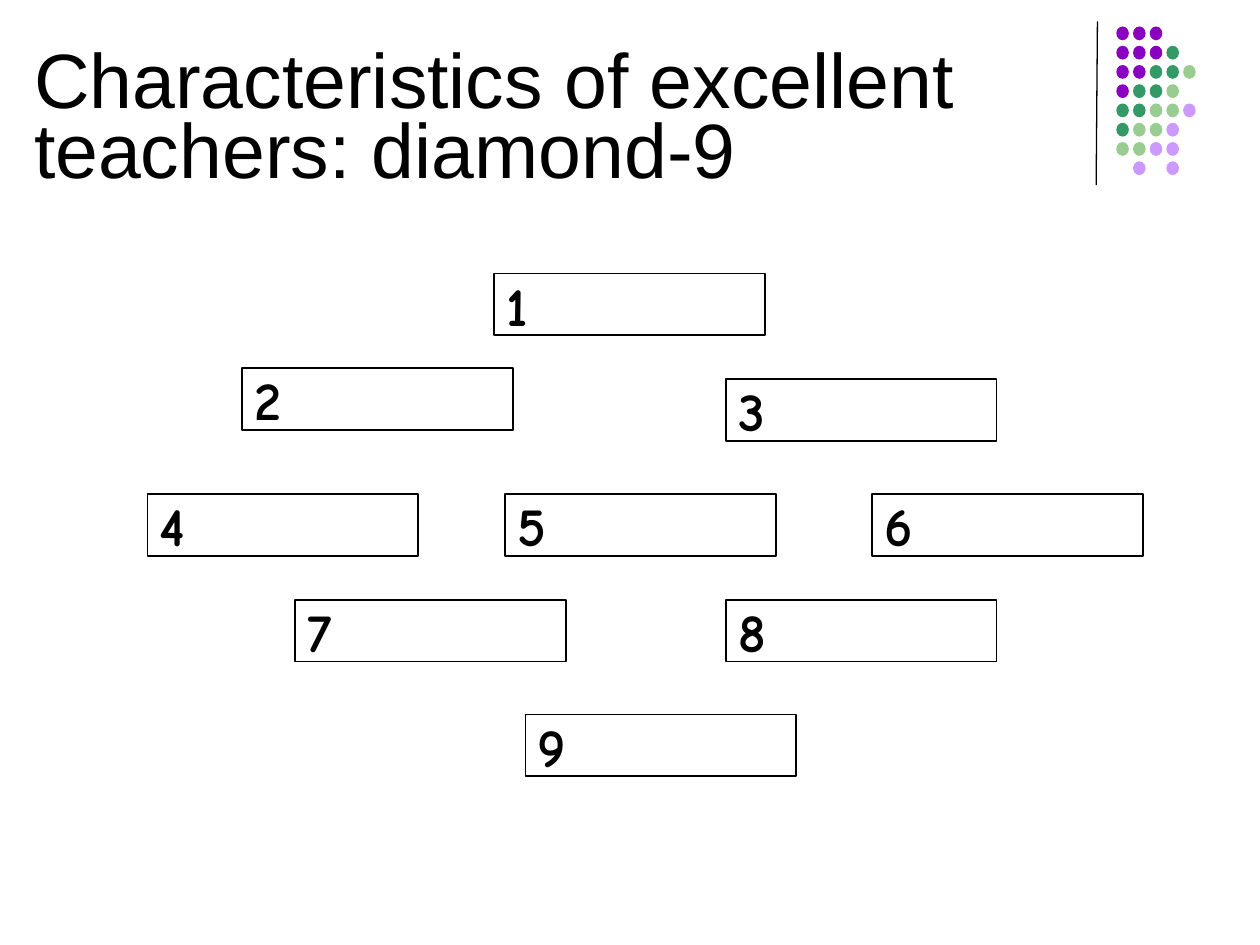
from lxml import etree
from pptx import Presentation
from pptx.dml.color import RGBColor
from pptx.enum.shapes import MSO_CONNECTOR, MSO_SHAPE
from pptx.enum.text import MSO_ANCHOR, MSO_AUTO_SIZE, PP_ALIGN
from pptx.oxml.ns import qn
from pptx.util import Inches, Pt

RECTANGLE, OVAL = MSO_SHAPE.RECTANGLE, MSO_SHAPE.OVAL
STRAIGHT = MSO_CONNECTOR.STRAIGHT
MIDDLE, LEFT = MSO_ANCHOR.MIDDLE, PP_ALIGN.LEFT
TITLE_ONLY = 5

COLORS = {
    "ink": "000000",
    "P": "8A00C0",  # purple
    "G": "339966",  # green
    "L": "99CC91",  # light green
    "V": "CC99FF",  # violet
}
DOT_ROWS = ["PPP", "PPPG", "PPGGL", "PGGL", "GGLLV", "GLLV", "LLVV", " V V"]

CARD_SIZE = (2.15, 0.49)
CARD_POSITIONS = [
    (3.92, 2.17),
    (1.92, 2.92), (5.76, 3.01),
    (1.17, 3.92), (4.01, 3.92), (6.92, 3.92),
    (2.34, 4.76), (5.76, 4.76),
    (4.17, 5.67),
]
FRAME_FORMAT = {
    "word_wrap": True,
    "auto_size": MSO_AUTO_SIZE.NONE,
    "vertical_anchor": MIDDLE,
    "margin_left": Inches(0.1),
    "margin_right": Inches(0.1),
    "margin_top": Inches(0.05),
    "margin_bottom": Inches(0.05),
}
TITLE_FONT = {"name": "Arial", "size": Pt(44), "bold": False}
CARD_FONT = {"name": "Comic Neue", "size": Pt(31), "bold": True}


def color(key):
    return RGBColor.from_string(COLORS[key])


def apply(target, values):
    for attribute, value in values.items():
        setattr(target, attribute, value)


def write(shape, text, font, line_spacing=1.0):
    frame = shape.text_frame
    apply(frame, FRAME_FORMAT)
    paragraph = frame.paragraphs[0]
    apply(paragraph, {"alignment": LEFT, "line_spacing": line_spacing})
    run = paragraph.add_run()
    run.text = text
    apply(run.font, font)
    run.font.color.rgb = color("ink")


def add_title(slide, left, top, width, height):
    title = slide.shapes.title
    apply(title, {"left": Inches(left), "top": Inches(top),
                  "width": Inches(width), "height": Inches(height)})
    write(title, "Characteristics of excellent teachers: diamond-9",
          TITLE_FONT, line_spacing=0.75)


def add_divider(slide, x1, y1, x2, y2):
    divider = slide.shapes.add_connector(
        STRAIGHT, Inches(x1), Inches(y1), Inches(x2), Inches(y2))
    divider.line.color.rgb = color("ink")
    divider.line.width = Pt(0.75)
    etree.SubElement(divider.element.spPr, qn("a:effectLst"))


def add_dots(slide, left, top, width, height):
    """Spread the dot pattern evenly over the given box."""
    dot_width, dot_height = 0.1, 0.11
    columns = max(len(row) for row in DOT_ROWS)
    step_x = (width - dot_width) / (columns - 1)
    step_y = (height - dot_height) / (len(DOT_ROWS) - 1)
    dots = slide.shapes.add_group_shape().shapes
    for row, pattern in enumerate(DOT_ROWS):
        for column, key in enumerate(pattern):
            if key == " ":
                continue
            dot = dots.add_shape(
                OVAL, Inches(left + column * step_x), Inches(top + row * step_y),
                Inches(dot_width), Inches(dot_height))
            dot.shadow.inherit = False
            dot.fill.solid()
            dot.fill.fore_color.rgb = color(key)
            dot.line.fill.background()


def add_card(slide, left, top, width, height, rank):
    card = slide.shapes.add_shape(
        RECTANGLE, Inches(left), Inches(top), Inches(width), Inches(height))
    card.shadow.inherit = False
    card.fill.background()
    card.line.color.rgb = color("ink")
    card.line.width = Pt(1)
    write(card, str(rank), CARD_FONT)


def main():
    deck = Presentation()
    deck.slide_width, deck.slide_height = Inches(10), Inches(7.5)
    slide = deck.slides.add_slide(deck.slide_layouts[TITLE_ONLY])
    add_divider(slide, 8.71, 0.17, 8.7, 1.47)
    add_dots(slide, 8.86, 0.21, 0.63, 1.18)
    add_title(slide, 0.17, 0.38, 9.83, 1.19)
    for rank, (left, top) in enumerate(CARD_POSITIONS, start=1):
        add_card(slide, left, top, *CARD_SIZE, rank)
    deck.save("out.pptx")


if __name__ == "__main__":
    main()
